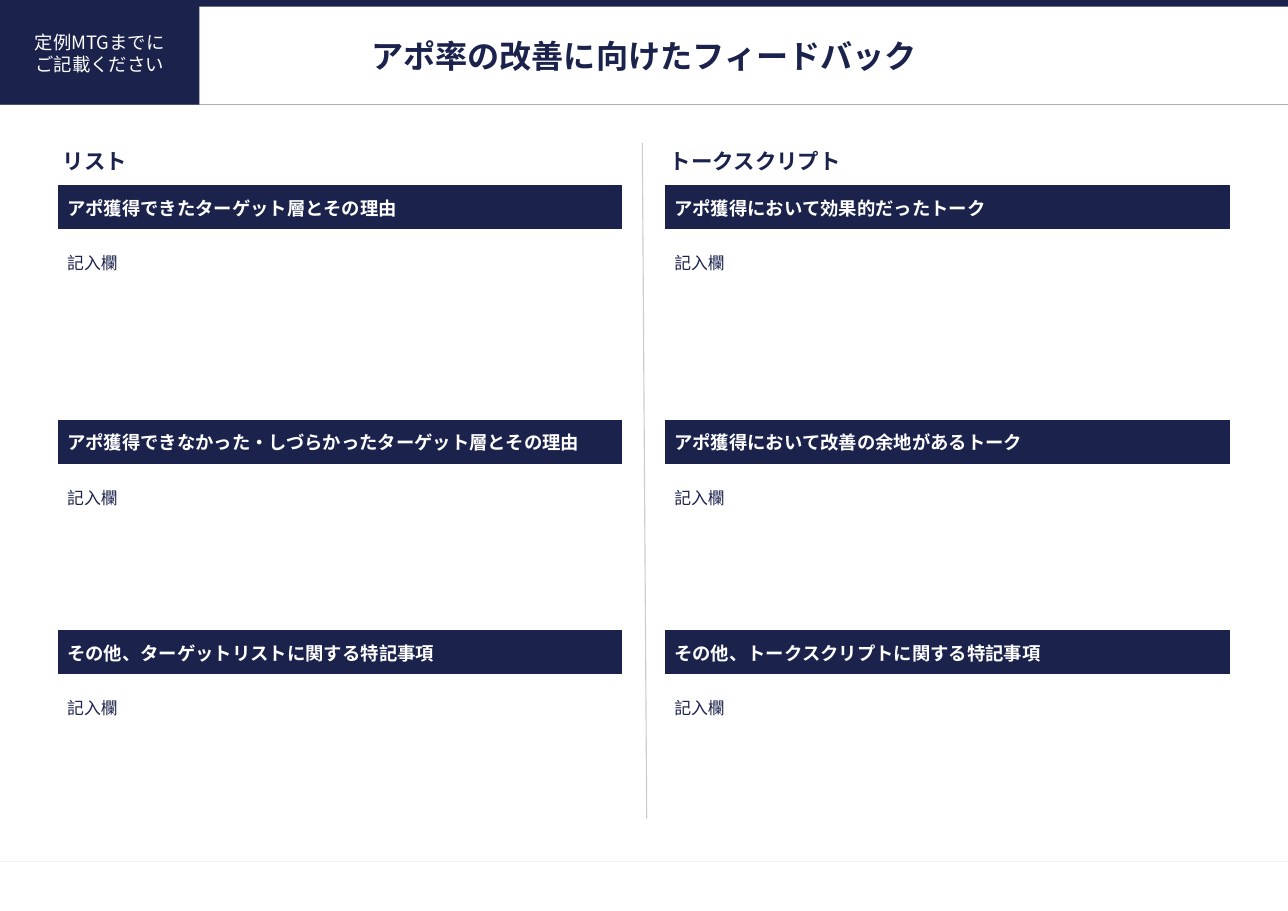
import pptx
import pptx.dml.color
import pptx.enum.shapes
import pptx.enum.text
import pptx.oxml.ns
import pptx.util
from lxml import etree

Inches = pptx.util.Inches
ALIGN = pptx.enum.text.PP_ALIGN
ANCHOR = pptx.enum.text.MSO_ANCHOR

FONT = "Noto Sans CJK JP"
COLORS = {"navy": "1B224C", "white": "FFFFFF", "rule": "AFAFAF",
          "divider": "CCCCCC", "footer": "F2F2F2"}
TITLE = "アポ率の改善に向けたフィードバック"
NOTICE = "定例MTGまでに\nご記載ください"
ENTRY = "記入欄"
COLUMNS = [
    ("リスト", ["アポ獲得できたターゲット層とその理由",
              "アポ獲得できなかった・しづらかったターゲット層とその理由",
              "その他、ターゲットリストに関する特記事項"]),
    ("トークスクリプト", ["アポ獲得において効果的だったトーク",
                   "アポ獲得において改善の余地があるトーク",
                   "その他、トークスクリプトに関する特記事項"]),
]
HEADING_HEIGHT, BAR_HEIGHT = 0.41, 0.4
ENTRY_HEIGHTS = [1.73, 1.51, 1.51]
TABLE_LEFT, TABLE_TOP, TABLE_WIDTH, TABLE_PITCH = 0.53, 1.27, 5.12, 5.51
NO_GRID_STYLE = "{2D5ABB26-0587-4C30-8999-92F81FD0307C}"
RULES = [((0, 7.82), (11.69, 7.82), "footer"),
         ((0, 0.95), (11.69, 0.95), "rule"),
         ((5.83, 1.3), (5.87, 7.43), "divider")]


def rgb(name):
    """Return the named colour."""
    return pptx.dml.color.RGBColor.from_string(COLORS[name])


def write(frame, text, size, color, bold=False, align=ALIGN.LEFT, spacing=None):
    """Fill a text frame and format its runs."""
    frame.text = text
    for para in frame.paragraphs:
        para.alignment = align
        para.line_spacing = spacing
        for span in para.runs:
            span.font.name = FONT
            span.font.size = pptx.util.Pt(size)
            span.font.bold = bold
            span.font.color.rgb = rgb(color)
            east_asian = etree.SubElement(span.font._element, pptx.oxml.ns.qn("a:ea"))
            east_asian.set("typeface", FONT)


def set_margins(target, side, bottom):
    """Set the inner margins of a cell or text frame."""
    target.margin_left = target.margin_right = target.margin_top = Inches(side)
    target.margin_bottom = Inches(bottom)


def add_rule(page, start, end, color):
    """Draw a thin line without a shadow."""
    rule = page.shapes.add_connector(
        pptx.enum.shapes.MSO_CONNECTOR.STRAIGHT, *map(Inches, start + end))
    rule.line.color.rgb = rgb(color)
    rule.line.width = pptx.util.Pt(0.75)
    etree.SubElement(rule._element.spPr, pptx.oxml.ns.qn("a:effectLst"))


def add_band(page, left, top, width, height):
    """Draw a navy rectangle."""
    band = page.shapes.add_shape(pptx.enum.shapes.MSO_SHAPE.RECTANGLE,
                                 *map(Inches, (left, top, width, height)))
    band.shadow.inherit = False
    band.fill.solid()
    band.fill.fore_color.rgb = rgb("navy")
    band.line.fill.background()
    return band


def add_feedback_table(page, left, heading, topics):
    """Add a heading followed by topic bars and entry fields."""
    rows = [("heading", heading, HEADING_HEIGHT)]
    for topic, entry_height in zip(topics, ENTRY_HEIGHTS):
        rows += [("bar", topic, BAR_HEIGHT), ("entry", ENTRY, entry_height)]
    total = sum(height for _, _, height in rows)
    table = page.shapes.add_table(
        len(rows), 1, *map(Inches, (left, TABLE_TOP, TABLE_WIDTH, total))).table
    table.first_row = table.horz_banding = False
    table._tbl.tblPr.find(pptx.oxml.ns.qn("a:tableStyleId")).text = NO_GRID_STYLE
    for index, (kind, text, height) in enumerate(rows):
        table.rows[index].height = Inches(height)
        cell = table.cell(index, 0)
        set_margins(cell, 0.04 if kind == "heading" else 0.08, 0.08)
        if kind == "bar":
            cell.fill.solid()
            cell.fill.fore_color.rgb = rgb("navy")
            cell.vertical_anchor = ANCHOR.MIDDLE
            write(cell.text_frame, text, 12, "white", bold=True)
        elif kind == "heading":
            cell.fill.background()
            write(cell.text_frame, text, 14, "navy", bold=True)
        else:
            cell.fill.background()
            write(cell.text_frame, text, 11, "navy", spacing=1.5)


def main():
    """Build the feedback sheet."""
    deck = pptx.Presentation()
    deck.slide_width, deck.slide_height = Inches(11.69), Inches(8.27)
    page = deck.slides.add_slide(deck.slide_layouts[6])

    for rule in RULES:
        add_rule(page, *rule)
    add_band(page, 0, 0, 11.69, 0.06)

    title = page.shapes.add_textbox(*map(Inches, (0.53, 0.32, 10.63, 0.39))).text_frame
    title.word_wrap = True
    title.vertical_anchor = ANCHOR.MIDDLE
    set_margins(title, 0.04, 0.06)
    write(title, TITLE, 21, "navy", bold=True, align=ALIGN.CENTER)

    for number, (heading, topics) in enumerate(COLUMNS):
        add_feedback_table(page, TABLE_LEFT + number * TABLE_PITCH, heading, topics)

    notice = add_band(page, 0, 0.01, 1.81, 0.94).text_frame
    notice.vertical_anchor = ANCHOR.MIDDLE
    set_margins(notice, 0.04, 0.04)
    write(notice, NOTICE, 12, "white", align=ALIGN.CENTER)

    deck.save("out.pptx")


if __name__ == "__main__":
    main()
